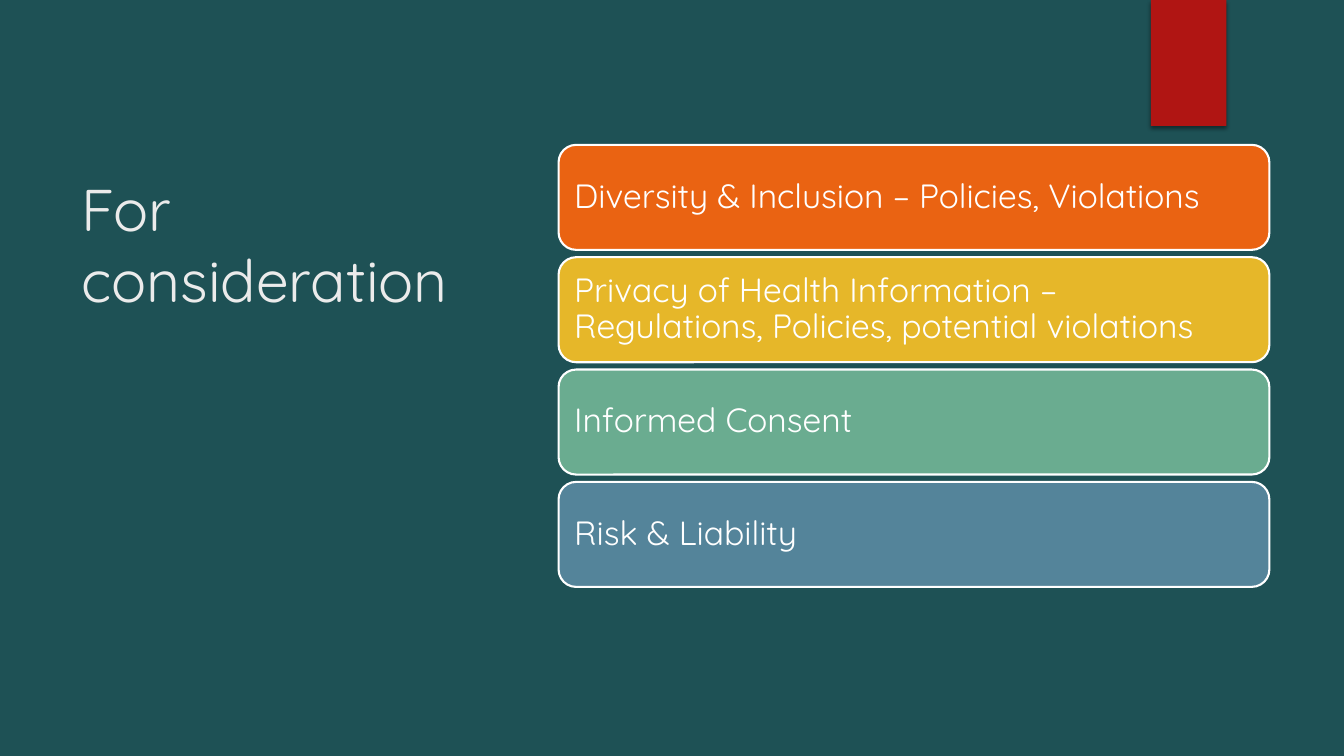
from dataclasses import dataclass

from lxml.etree import SubElement
from pptx import Presentation
from pptx.dml.color import RGBColor
from pptx.enum.shapes import MSO_SHAPE
from pptx.enum.text import MSO_ANCHOR, MSO_AUTO_SIZE, PP_ALIGN
from pptx.oxml.ns import qn
from pptx.shapes.autoshape import Shape
from pptx.slide import Slide
from pptx.util import Emu, Pt

EMU_PER_PX = 9525
FONT = "Quicksand"
BAR_LEFT, BAR_TOP, BAR_WIDTH, BAR_HEIGHT, BAR_PITCH = 532, 138, 677, 100, 107


@dataclass(frozen=True)
class Topic:
    text: str
    fill: str


TOPICS = [
    Topic("Diversity & Inclusion – Policies, Violations", "EA6312"),
    Topic("Privacy of Health Information – Regulations, Policies, potential violations", "E6B729"),
    Topic("Informed Consent", "6AAC90"),
    Topic("Risk & Liability", "54849A"),
]


def px(n: int) -> Emu:
    return Emu(n * EMU_PER_PX)


def rgb(value: str) -> RGBColor:
    return RGBColor.from_string(value)


def set_text(sp: Shape, text: str, size: int, color: str, frame: dict, para: dict) -> None:
    tf = sp.text_frame
    for name, value in frame.items():
        setattr(tf, name, value)
    p = tf.paragraphs[0]
    for name, value in para.items():
        setattr(p, name, value)
    r = p.add_run()
    r.text = text
    for name, value in {"name": FONT, "size": Pt(size), "bold": False}.items():
        setattr(r.font, name, value)
    r.font.color.rgb = rgb(color)


def add_block(s: Slide, kind: MSO_SHAPE, box: tuple[int, int, int, int], fill: str) -> Shape:
    sp = s.shapes.add_shape(kind, *map(px, box))
    sp.shadow.inherit = False
    sp.fill.solid()
    sp.fill.fore_color.rgb = rgb(fill)
    return sp


def add_tab(s: Slide) -> None:
    sp = add_block(s, MSO_SHAPE.RECTANGLE, (1096, 0, 72, 120), "B01513")
    sp.line.fill.background()
    effects = sp.element.spPr.find(qn("a:effectLst"))
    shadow = SubElement(effects, qn("a:outerShdw"), blurRad=str(Pt(3)), dist=str(Pt(2)),
                        dir="5400000", rotWithShape="0")
    color = SubElement(shadow, qn("a:srgbClr"), val="000000")
    SubElement(color, qn("a:alpha"), val="45000")


def add_title(s: Slide) -> None:
    sp = s.shapes.title
    box = {"left": 68, "top": 160, "width": 465, "height": 477}
    for name, value in box.items():
        setattr(sp, name, px(value))
    frame = {"word_wrap": True, "auto_size": MSO_AUTO_SIZE.NONE,
             "vertical_anchor": MSO_ANCHOR.TOP, "margin_right": px(20)}
    set_text(sp, "For consideration", 42, "EBEBEB", frame, {"alignment": PP_ALIGN.LEFT})


def add_bar(s: Slide, index: int, topic: Topic) -> None:
    box = (BAR_LEFT, BAR_TOP + index * BAR_PITCH, BAR_WIDTH, BAR_HEIGHT)
    sp = add_block(s, MSO_SHAPE.ROUNDED_RECTANGLE, box, topic.fill)
    sp.line.color.rgb = rgb("FFFFFF")
    sp.line.width = Pt(1.5)
    frame = {"word_wrap": True, "vertical_anchor": MSO_ANCHOR.MIDDLE,
             "margin_left": px(10), "margin_right": px(10)}
    para = {"alignment": PP_ALIGN.LEFT, "line_spacing": 0.9}
    set_text(sp, topic.text, 24, "FFFFFF", frame, para)


def main() -> None:
    prs = Presentation()
    prs.slide_width, prs.slide_height = px(1280), px(720)
    s = prs.slides.add_slide(prs.slide_layouts[5])
    s.background.fill.solid()
    s.background.fill.fore_color.rgb = rgb("1E5155")
    add_tab(s)
    add_title(s)
    for index, topic in enumerate(TOPICS):
        add_bar(s, index, topic)
    prs.save("out.pptx")


if __name__ == "__main__":
    main()
